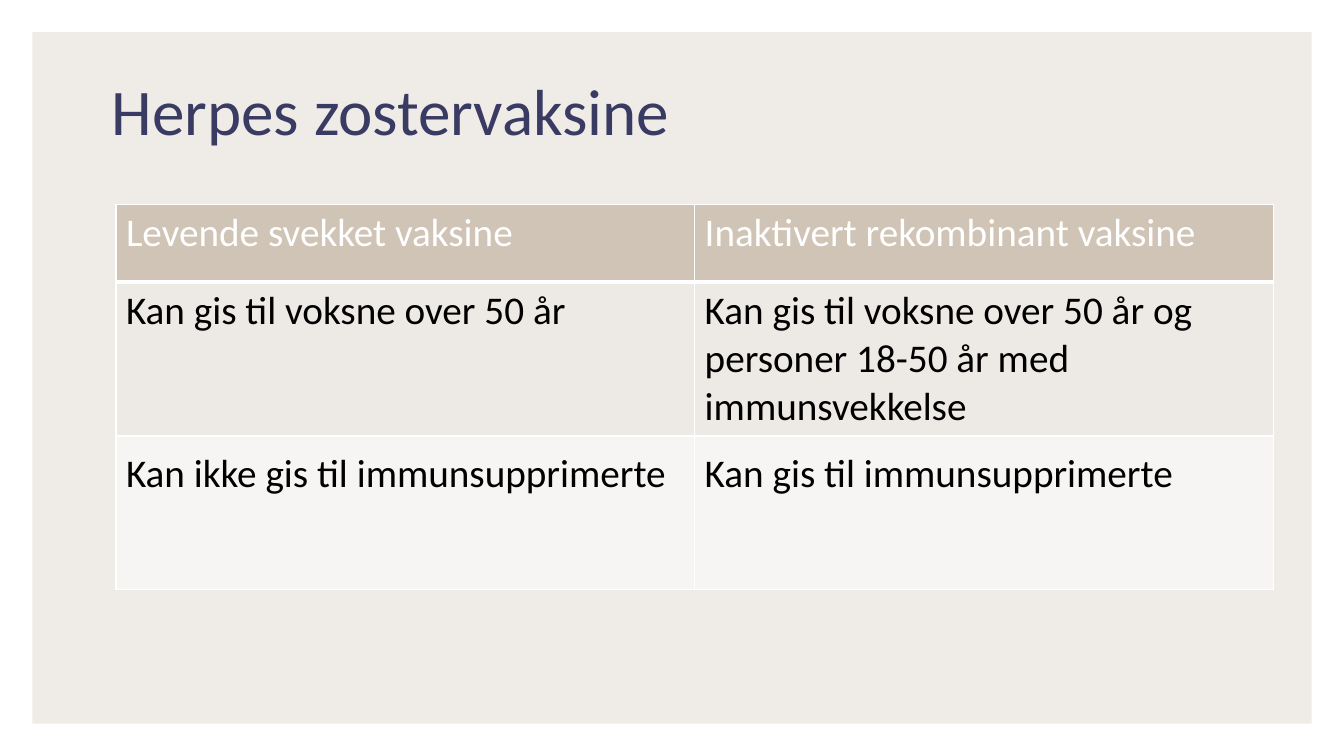
import pptx
import pptx.dml.color
import pptx.enum.shapes
import pptx.enum.text
import pptx.oxml
import pptx.oxml.ns
import pptx.util

HEADING = "Herpes zostervaksine"
VACCINES = [
    ("Levende svekket vaksine", "Inaktivert rekombinant vaksine"),
    ("Kan gis til voksne over 50 år",
     "Kan gis til voksne over 50 år og personer 18-50 år med immunsvekkelse"),
    ("Kan ikke gis til immunsupprimerte", "Kan gis til immunsupprimerte"),
]

COLORS = {"panel": "EFECE8", "heading": "3A3B63", "border": "FFFFFF"}
# Per table row: height, fill, text colour, bottom border, line spacing, space after
ROW_STYLES = [
    (0.77, "CFC4B6", "FFFFFF", 3, 1.0, 0),
    (1.31, "EDEAE5", "000000", 1, 1.0, 0),
    (1.52, "F6F5F3", "000000", 1, 1.2, 3),
]
FONT = "Calibri"
SLIDE_WIDTH, SLIDE_HEIGHT, MARGIN = 13.33, 7.5, 0.32
TABLE_LEFT, TABLE_TOP, COLUMN_WIDTH = 1.15, 2.03, 5.74


def paint(fill, color):
    fill.solid()
    fill.fore_color.rgb = pptx.dml.color.RGBColor.from_string(color)


def style_font(font, size, color):
    font.name = FONT
    font.size = pptx.util.Pt(size)
    font.bold = False
    font.color.rgb = pptx.dml.color.RGBColor.from_string(color)


def add_borders(cell, top, bottom):
    properties = cell._tc.get_or_add_tcPr()
    for side, width in (("L", 1), ("R", 1), ("T", top), ("B", bottom)):
        properties.append(pptx.oxml.parse_xml(
            f'<a:ln{side} {pptx.oxml.ns.nsdecls("a")} w="{pptx.util.Pt(width)}">'
            f'<a:solidFill><a:srgbClr val="{COLORS["border"]}"/></a:solidFill></a:ln{side}>'))


def add_panel(slide):
    panel = slide.shapes.add_shape(
        pptx.enum.shapes.MSO_SHAPE.RECTANGLE,
        *map(pptx.util.Inches, (MARGIN, MARGIN, SLIDE_WIDTH - 2 * MARGIN,
                                SLIDE_HEIGHT - 2 * MARGIN)))
    panel.shadow.inherit = False
    paint(panel.fill, COLORS["panel"])
    panel.line.fill.background()
    slide.shapes.title._element.addprevious(panel._element)


def add_heading(slide):
    heading = slide.shapes.title
    heading.left, heading.top, heading.width, heading.height = map(
        pptx.util.Inches, (1.11, 0.79, 11.5, 1.41))
    frame = heading.text_frame
    frame.text = HEADING
    frame.margin_left = frame.margin_right = frame.margin_top = frame.margin_bottom = 0
    frame.vertical_anchor = pptx.enum.text.MSO_ANCHOR.TOP
    frame.auto_size = pptx.enum.text.MSO_AUTO_SIZE.NONE
    paragraph = frame.paragraphs[0]
    paragraph.alignment = pptx.enum.text.PP_ALIGN.LEFT
    paragraph.line_spacing = 0.9
    style_font(paragraph.runs[0].font, 46.5, COLORS["heading"])


def add_vaccine_table(slide):
    columns = len(VACCINES[0])
    table = slide.shapes.add_table(
        len(VACCINES), columns,
        *map(pptx.util.Inches, (TABLE_LEFT, TABLE_TOP, columns * COLUMN_WIDTH,
                                sum(style[0] for style in ROW_STYLES)))).table
    table.horz_banding = False
    for column in table.columns:
        column.width = pptx.util.Inches(COLUMN_WIDTH)
    top = 1
    for row, texts, style in zip(table.rows, VACCINES, ROW_STYLES):
        height, fill, color, bottom, spacing, after = style
        row.height = pptx.util.Inches(height)
        for cell, text in zip(row.cells, texts):
            cell.text_frame.text = text
            add_borders(cell, top, bottom)
            paint(cell.fill, fill)
            paragraph = cell.text_frame.paragraphs[0]
            paragraph.line_spacing = spacing
            paragraph.space_after = pptx.util.Pt(after)
            style_font(paragraph.runs[0].font, 28, color)
        top = bottom


def main():
    deck = pptx.Presentation()
    deck.slide_width = pptx.util.Inches(SLIDE_WIDTH)
    deck.slide_height = pptx.util.Inches(SLIDE_HEIGHT)
    slide = deck.slides.add_slide(deck.slide_layouts.get_by_name("Title Only"))
    add_panel(slide)
    add_heading(slide)
    add_vaccine_table(slide)
    deck.save("out.pptx")


if __name__ == "__main__":
    main()
